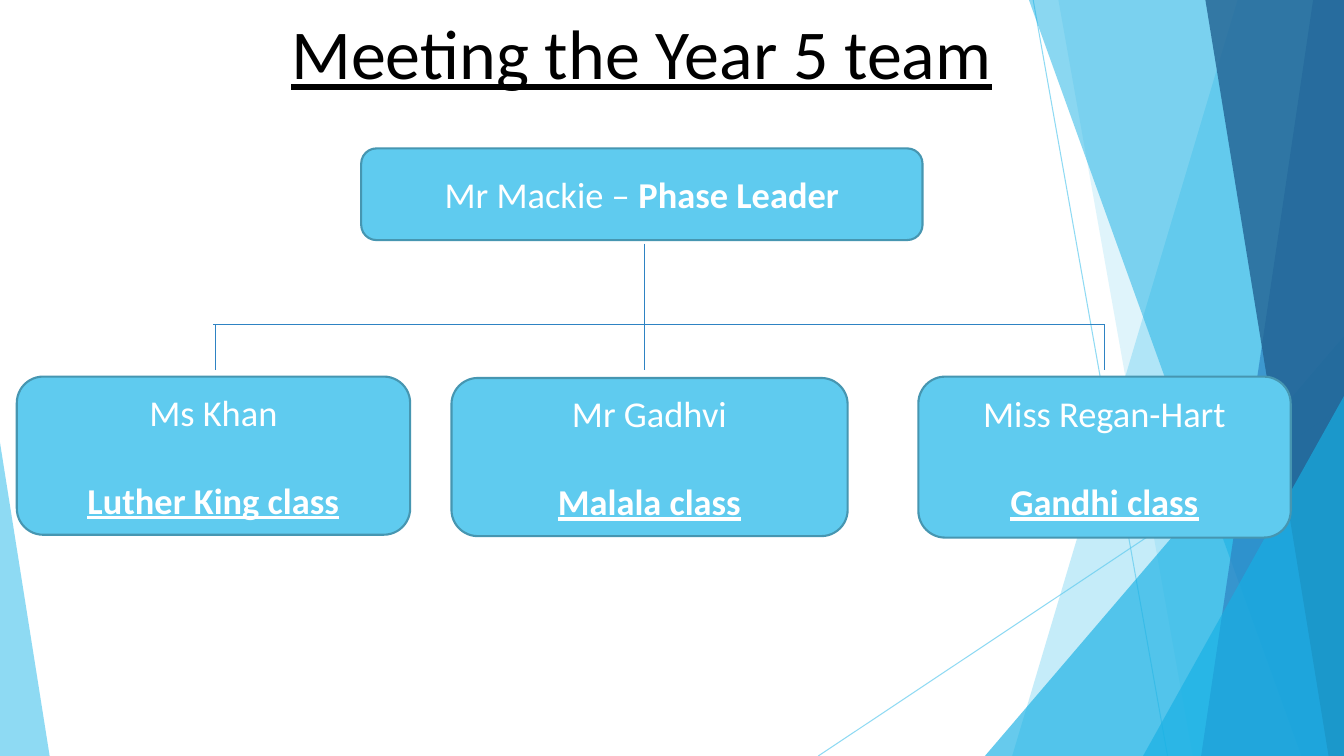
from lxml import etree
from pptx import Presentation
from pptx.dml.color import RGBColor
from pptx.enum import shapes, text
from pptx.oxml.ns import qn
from pptx.util import Pt

W, H = 960, 540
FONT = "Calibri"
BLACK = RGBColor(0, 0, 0)
WHITE = RGBColor(0xFF, 0xFF, 0xFF)
SKY = RGBColor(0x5F, 0xCB, 0xEF)
CYAN = RGBColor(0x17, 0xB0, 0xE4)
BLUE = RGBColor(0x2E, 0x83, 0xC3)
NAVY = RGBColor(0x22, 0x62, 0x92)
TEAL = RGBColor(0x46, 0x96, 0xB1)


def set_opacity(fill_format, percent):
    """Make a solid fill, of a shape or a line, partly transparent."""
    clr = fill_format._xPr.find(qn("a:solidFill"))[0]
    etree.SubElement(clr, qn("a:alpha"), val=str(percent * 1000))


def paint(sp, color, opacity):
    sp.shadow.inherit = False
    sp.fill.solid()
    sp.fill.fore_color.rgb = color
    set_opacity(sp.fill, opacity)
    sp.line.fill.background()


def add_line(s, x1, y1, x2, y2, color=BLUE, width=1):
    cx = s.shapes.add_connector(shapes.MSO_CONNECTOR.STRAIGHT,
                                Pt(x1), Pt(y1), Pt(x2), Pt(y2))
    cx.line.color.rgb = color
    cx.line.width = Pt(width)
    etree.SubElement(cx._element.spPr, qn("a:effectLst"))
    return cx


def add_band(s, top_x, bottom_x, color, opacity):
    """Fill from a slanted left edge to the right edge of the slide."""
    fb = s.shapes.build_freeform(Pt(top_x), 0)
    fb.add_line_segments([(Pt(W), 0), (Pt(W), Pt(H)), (Pt(bottom_x), Pt(H))])
    paint(fb.convert_to_shape(), color, opacity)


def add_triangle(s, x, y, w, apex, color, opacity):
    """Triangle standing on the bottom edge, apex from 0 (left) to 1 (right)."""
    sp = s.shapes.add_shape(shapes.MSO_SHAPE.ISOSCELES_TRIANGLE,
                            Pt(x), Pt(y), Pt(w), Pt(H - y))
    sp.adjustments[0] = apex
    paint(sp, color, opacity)


def add_backdrop(s):
    for ends in ((738, 0, 834, H), (W, 290, 584.5, H)):
        set_opacity(add_line(s, *ends, SKY, 0.75).line.fill, 70)
    add_band(s, 884, 723, SKY, 36)
    add_band(s, 756, 852, SKY, 20)
    add_triangle(s, 703.5, 240, 256.5, 1, CYAN, 66)
    add_band(s, 735, 929.5, CYAN, 50)
    add_band(s, 938, 858, BLUE, 70)
    add_band(s, 861, 949, NAVY, 80)
    add_triangle(s, 816.5, 283, 143.5, 1, CYAN, 66)
    add_triangle(s, 0, 316, 35.5, 0, SKY, 70)


def add_title(s, x, y, w, h):
    sp = s.shapes.title
    sp.left, sp.top, sp.width, sp.height = Pt(x), Pt(y), Pt(w), Pt(h)
    tf = sp.text_frame
    tf.text = "Meeting the Year 5 team"
    tf.vertical_anchor = text.MSO_ANCHOR.TOP
    p = tf.paragraphs[0]
    p.alignment = text.PP_ALIGN.CENTER
    p.font.name, p.font.size = FONT, Pt(50)
    p.font.underline = True
    p.font.color.rgb = BLACK


def format_paragraph(p):
    p.alignment = text.PP_ALIGN.CENTER
    p.font.name, p.font.size = FONT, Pt(26)
    p.font.color.rgb = WHITE


def add_box(s, x, y, w, h):
    sp = s.shapes.add_shape(shapes.MSO_SHAPE.ROUNDED_RECTANGLE,
                            Pt(x), Pt(y), Pt(w), Pt(h))
    sp.shadow.inherit = False
    sp.fill.solid()
    sp.fill.fore_color.rgb = SKY
    sp.line.color.rgb = TEAL
    sp.line.width = Pt(1.5)
    tf = sp.text_frame
    tf.word_wrap = True
    tf.vertical_anchor = text.MSO_ANCHOR.MIDDLE
    return tf


def add_leader(s, x, y, w, h):
    p = add_box(s, x, y, w, h).paragraphs[0]
    format_paragraph(p)
    p.add_run().text = "Mr Mackie – "
    r = p.add_run()
    r.text = "Phase Leader"
    r.font.bold = True


def add_teacher(s, name, class_name, x, y, w, h):
    tf = add_box(s, x, y, w, h)
    tf.text = name
    format_paragraph(tf.paragraphs[0])
    p = tf.add_paragraph()
    p.text = class_name
    format_paragraph(p)
    p.space_before = Pt(31.5)
    p.font.bold = p.font.underline = True


def add_branches(s, top, rail, bottom, left, middle, right):
    """Trunk from top to the rail, then a drop to each of three boxes."""
    add_line(s, left - 1.5, rail, right, rail)
    add_line(s, middle, top, middle, rail)
    for x in (left, middle, right):
        add_line(s, x, rail, x, bottom)


def add_team_slide(prs):
    s = prs.slides.add_slide(prs.slide_layouts[5])
    add_backdrop(s)
    add_title(s, 120, 3.5, 677, 104)
    add_leader(s, 258, 106, 401, 65.5)
    add_teacher(s, "Ms Khan", "Luther King class", 12, 269, 281, 113)
    add_teacher(s, "Mr Gadhvi", "Malala class", 322.5, 270, 283, 113)
    add_teacher(s, "Miss Regan-Hart", "Gandhi class", 656, 269, 266, 115)
    add_branches(s, 174, 232, 264.5, 154, 460.5, 789)


def main():
    prs = Presentation()
    prs.slide_width, prs.slide_height = Pt(W), Pt(H)
    add_team_slide(prs)
    prs.save("out.pptx")


if __name__ == "__main__":
    main()
